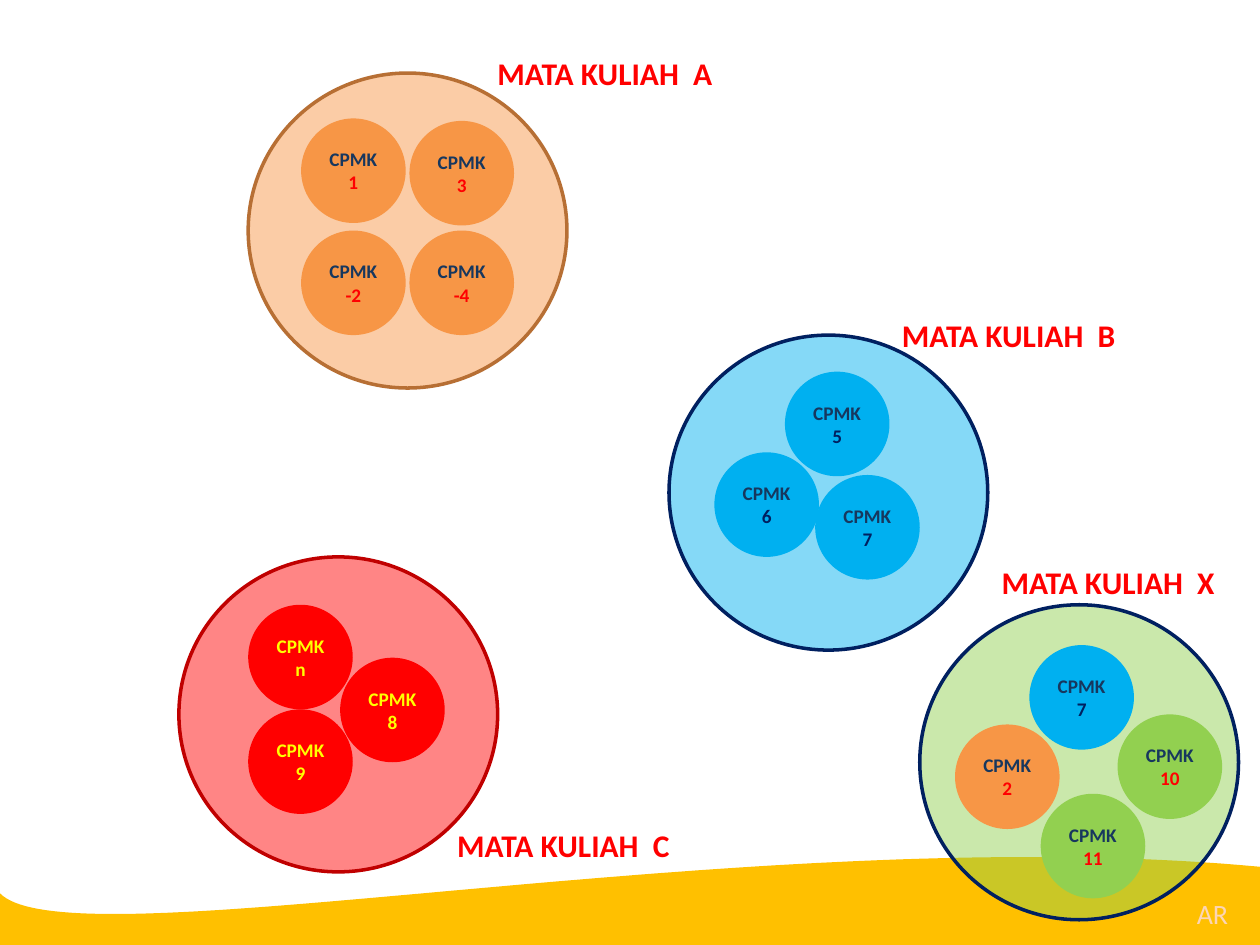
from dataclasses import dataclass

from lxml.etree import SubElement
from pptx import Presentation
from pptx.dml.color import RGBColor
from pptx.enum.shapes import MSO_SHAPE
from pptx.enum.text import MSO_ANCHOR, PP_ALIGN
from pptx.oxml.ns import qn
from pptx.util import Inches, Pt


@dataclass(frozen=True)
class Theme:
    font: str = "Calibri"
    orange: str = "F79646"
    brown: str = "B76F34"
    blue: str = "00B0F0"
    navy: str = "002060"
    slate: str = "17375E"
    red: str = "FF0000"
    dark_red: str = "C00000"
    green: str = "92D050"
    yellow: str = "FFFF00"
    wave: str = "FFC000"
    peach: str = "FCD5B5"
    label_size: int = 18
    footer_size: int = 16
    outcome_size: int = 11
    outline: int = 2
    opacity: int = 48


THEME = Theme()
COURSE_WIDTH, COURSE_HEIGHT = 2.53, 2.5
OUTCOME_SIZE = 0.83


def write_text(frame, runs, *, size, bold=False, align=PP_ALIGN.LEFT,
               anchor=MSO_ANCHOR.TOP, wrap=True):
    """Write (text, colour) runs as one paragraph."""
    frame.word_wrap = wrap
    frame.vertical_anchor = anchor
    paragraph = frame.paragraphs[0]
    paragraph.alignment = align
    for text, colour in runs:
        run = paragraph.add_run()
        run.text = text
        run.font.name = THEME.font
        run.font.size = Pt(size)
        run.font.bold = bold
        run.font.color.rgb = RGBColor.from_string(colour)


def curve_points(start, control_1, control_2, end, steps=80):
    """Points along a cubic curve."""
    points = []
    for step in range(steps + 1):
        t = step / steps
        weights = ((1 - t) ** 3, 3 * t * (1 - t) ** 2, 3 * t ** 2 * (1 - t), t ** 3)
        corners = (start, control_1, control_2, end)
        points.append(tuple(sum(weight * corner[axis] for weight, corner
                                in zip(weights, corners)) for axis in (0, 1)))
    return points


class SlideBuilder:
    def __init__(self, slide, theme):
        self.slide = slide
        self.theme = theme

    def paint(self, shape, fill, line=None, opacity=None):
        shape.shadow.inherit = False
        shape.fill.solid()
        shape.fill.fore_color.rgb = RGBColor.from_string(fill)
        if opacity:
            colour = shape.fill._xPr.find(qn("a:solidFill"))[0]
            SubElement(colour, qn("a:alpha"), val=str(opacity * 1000))
        if line:
            shape.line.color.rgb = RGBColor.from_string(line)
            shape.line.width = Pt(self.theme.outline)
        else:
            shape.line.fill.background()

    def circle(self, left, top, width, height, fill, **paint):
        shape = self.slide.shapes.add_shape(
            MSO_SHAPE.OVAL, Inches(left), Inches(top), Inches(width), Inches(height))
        self.paint(shape, fill, **paint)
        return shape

    def outcome(self, left, top, number, fill, text_colour, number_colour):
        shape = self.circle(left, top, OUTCOME_SIZE, OUTCOME_SIZE, fill)
        # The narrow circle wraps the number below the word
        write_text(shape.text_frame, [("CPMK", text_colour), (number, number_colour)],
                   size=self.theme.outcome_size, bold=True,
                   align=PP_ALIGN.CENTER, anchor=MSO_ANCHOR.MIDDLE)

    def label(self, left, top, width, height, text, colour, **text_format):
        box = self.slide.shapes.add_textbox(
            Inches(left), Inches(top), Inches(width), Inches(height))
        write_text(box.text_frame, [(text, colour)], **text_format)

    def wave(self):
        crest = curve_points((0, 7.09), (0.56, 7.67), (5.96, 6.5), (10, 6.88))
        points = [(Inches(x), Inches(y)) for x, y in crest + [(10, 7.5), (0, 7.5)]]
        builder = self.slide.shapes.build_freeform(*points[0])
        builder.add_line_segments(points[1:], close=True)
        self.paint(builder.convert_to_shape(), self.theme.wave)

    def course(self, name, position, fill, line, label_box, outcomes):
        self.circle(*position, COURSE_WIDTH, COURSE_HEIGHT, fill,
                    line=line, opacity=self.theme.opacity)
        for outcome in outcomes:
            self.outcome(*outcome)
        self.label(*label_box, f"MATA KULIAH  {name}", self.theme.red,
                   size=self.theme.label_size, bold=True)


def main():
    presentation = Presentation()
    presentation.slide_width = Inches(10)
    presentation.slide_height = Inches(7.5)
    slide = presentation.slides.add_slide(presentation.slide_layouts[6])
    builder = SlideBuilder(slide, THEME)

    # Footer
    builder.wave()
    builder.label(9.4, 7.07, 0.63, 0.37, "AR", THEME.peach,
                  size=THEME.footer_size, wrap=False)

    # Outcome colours: fill, word, number
    orange = (THEME.orange, THEME.slate, THEME.red)
    blue = (THEME.blue, THEME.slate, THEME.navy)
    red = (THEME.red, THEME.yellow, THEME.yellow)
    green = (THEME.green, THEME.slate, THEME.red)

    # Courses with their outcomes
    builder.course("C", (1.42, 4.42), THEME.red, THEME.dark_red, (3.53, 6.51, 2.22, 0.42), [
        (2.7, 5.22, "8", *red),
        (1.97, 5.63, "9", *red),
        (1.97, 4.8, "n", *red),
    ])
    builder.course("B", (5.31, 2.66), THEME.blue, THEME.navy, (7.06, 2.46, 2.22, 0.42), [
        (6.23, 2.95, "5", *blue),
        (5.67, 3.59, "6", *blue),
        (6.47, 3.77, "7", *blue),
    ])
    builder.course("A", (1.97, 0.58), THEME.orange, THEME.brown, (3.85, 0.38, 3.03, 0.4), [
        (2.39, 1.83, "-2", *orange),
        (3.25, 0.96, "3", *orange),
        (3.25, 1.83, "-4", *orange),
        (2.39, 0.94, "1", *orange),
    ])
    builder.course("X", (7.3, 4.8), THEME.green, THEME.navy, (7.85, 4.42, 2.22, 0.42), [
        (8.17, 5.12, "7", *blue),
        (7.58, 5.75, "2", *orange),
        (8.26, 6.3, "11", *green),
        (8.87, 5.67, "10", *green),
    ])

    presentation.save("out.pptx")


if __name__ == "__main__":
    main()
